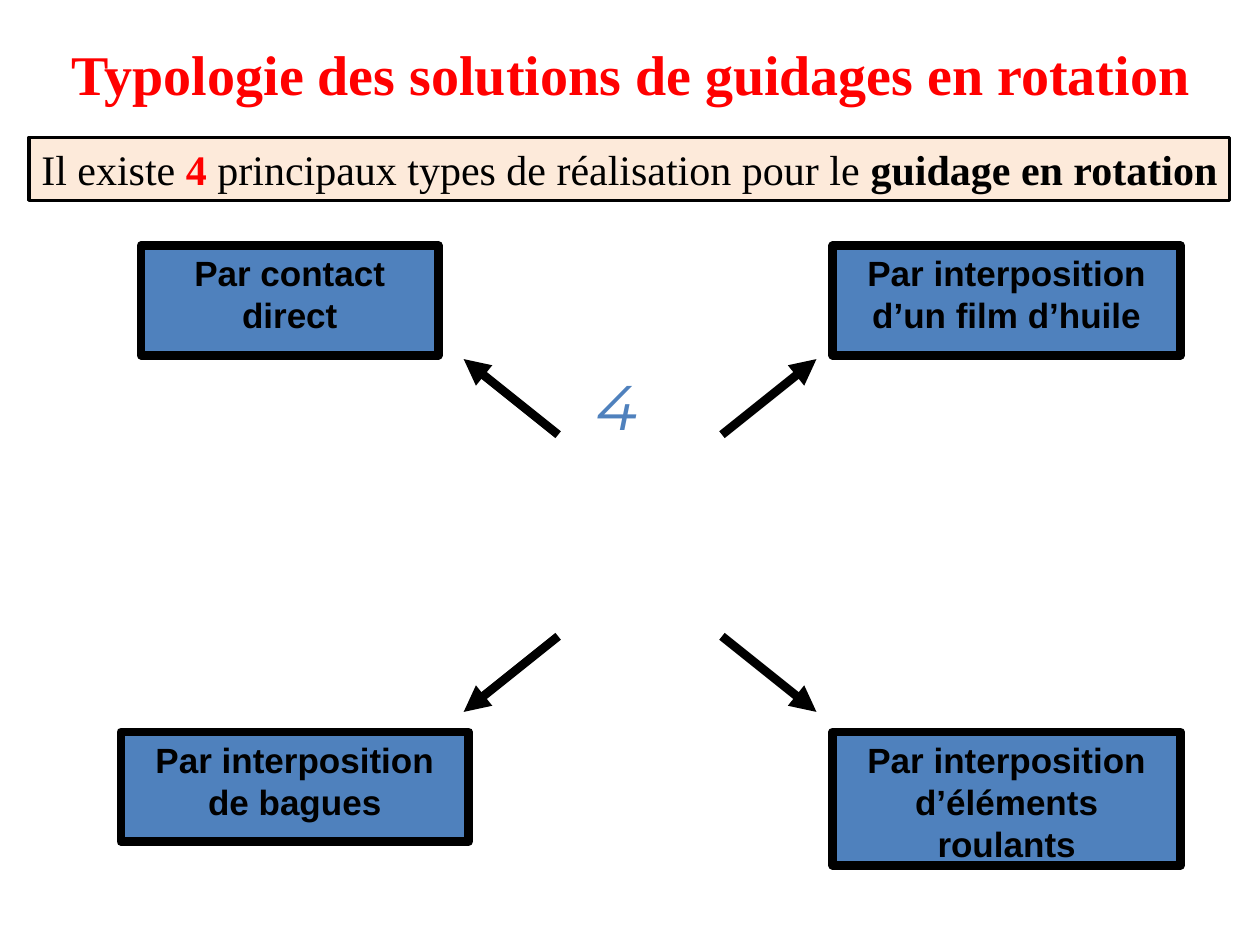
from lxml import etree
from pptx import Presentation
from pptx.dml.color import RGBColor
from pptx.enum.shapes import MSO_CONNECTOR, MSO_SHAPE
from pptx.enum.text import MSO_ANCHOR, PP_ALIGN
from pptx.oxml.ns import qn
from pptx.util import Inches, Pt

RECTANGLE = MSO_SHAPE.RECTANGLE
STRAIGHT = MSO_CONNECTOR.STRAIGHT
CENTER, LEFT = PP_ALIGN.CENTER, PP_ALIGN.LEFT
TOP, MIDDLE = MSO_ANCHOR.TOP, MSO_ANCHOR.MIDDLE

COLORS = {
    "black": "000000",
    "red": "FF0000",
    "blue": "4F81BD",
    "cream": "FDEADA",
}
SERIF, SANS, DISPLAY = "Times New Roman", "Arial", "Montserrat"

deck = Presentation()
deck.slide_width, deck.slide_height = Inches(10), Inches(7.5)
page = deck.slides.add_slide(deck.slide_layouts[6])
column = deck.slide_width / 100
row = deck.slide_height / 75


def place(left, top, width, height, fill=None, border=0):
    area = (int(left * column), int(top * row), int(width * column), int(height * row))
    if fill is None:
        return page.shapes.add_textbox(*area)
    box = page.shapes.add_shape(RECTANGLE, *area)
    box.shadow.inherit = False
    box.fill.solid()
    box.fill.fore_color.rgb = RGBColor.from_string(COLORS[fill])
    box.line.color.rgb = RGBColor.from_string(COLORS["black"])
    box.line.width = Pt(border)
    return box


def write(box, spans, font, size, align=LEFT, anchor=TOP, wrap=True):
    frame = box.text_frame
    frame.word_wrap = wrap
    frame.vertical_anchor = anchor
    para = frame.paragraphs[0]
    para.alignment = align
    for text, color, bold in spans:
        span = para.add_run()
        span.text = text
        span.font.name = font
        span.font.size = Pt(size)
        span.font.bold = bold
        span.font.color.rgb = RGBColor.from_string(COLORS[color])
    return para


title = place(4.7, 0, 95.3, 8.1)
para = write(title, [("Typologie des solutions de guidages en rotation", "red", True)], SERIF, 32)
para.line_spacing = 1.5

intro = place(2.3, 10.9, 95.3, 5, "cream", 2)
write(intro, [
    ("Il existe ", "black", False),
    ("4", "red", True),
    (" principaux types de réalisation pour le ", "black", False),
    ("guidage en rotation", "black", True),
], SERIF, 24, anchor=MIDDLE, wrap=False)

count = place(42.2, 28.7, 13.5, 23.4)
para = write(count, [("4", "blue", False)], DISPLAY, 36, CENTER, wrap=False)
para.runs[0].font.italic = True

center_x, center_y = 50.8, 42.5
upper, lower = 19.5, 58.1
solutions = [
    ("Par contact direct", 11.2, upper, 23.6, 8.7, -1, -1),
    ("Par interposition d’un film d’huile", 66.1, upper, 27.6, 8.7, 1, -1),
    ("Par interposition de bagues", 9.6, lower, 27.6, 8.7, -1, 1),
    ("Par interposition d’éléments roulants", 66.1, lower, 27.6, 10.6, 1, 1),
]
for label, left, top, width, height, side_x, side_y in solutions:
    box = place(left, top, width, height, "blue", 5)
    write(box, [(label, "black", True)], SANS, 20, CENTER)
    arrow = page.shapes.add_connector(
        STRAIGHT,
        int((center_x + side_x * 6.5) * column), int((center_y + side_y * 8) * row),
        int((center_x + side_x * 14) * column), int((center_y + side_y * 14) * row),
    )
    arrow.line.color.rgb = RGBColor.from_string(COLORS["black"])
    arrow.line.width = Pt(5)
    etree.SubElement(arrow.line._get_or_add_ln(), qn("a:tailEnd"), type="triangle")
    etree.SubElement(arrow._element.spPr, qn("a:effectLst"))

deck.save("out.pptx")
